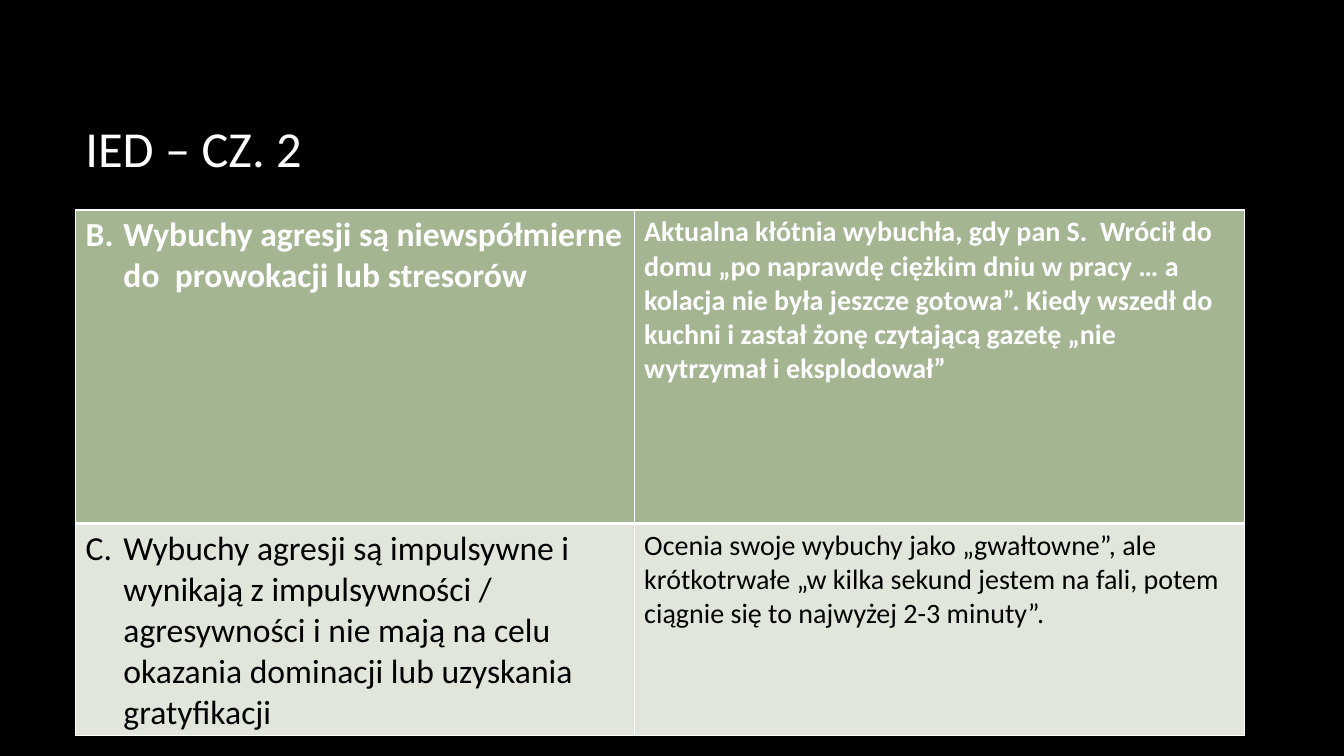
"""Build the slide "IED – CZ. 2" with its two-row criteria table."""
from lxml import etree
from pptx import Presentation
from pptx.dml.color import RGBColor
from pptx.enum import text
from pptx.oxml import ns
from pptx.util import Pt

BLACK = RGBColor(0x00, 0x00, 0x00)
WHITE = RGBColor(0xFF, 0xFF, 0xFF)
SAGE = RGBColor(0xA5, 0xB5, 0x92)
PALE_SAGE = RGBColor(0xE1, 0xE5, 0xDC)
FONT = "Calibri"

TITLE = "IED – CZ. 2"
CRITERIA = [
    ("Wybuchy agresji są niewspółmierne do  prowokacji lub stresorów",
     "Aktualna kłótnia wybuchła, gdy pan S.  Wrócił do domu „po naprawdę ciężkim dniu w pracy … "
     "a kolacja nie była jeszcze gotowa”. Kiedy wszedł do kuchni i zastał żonę czytającą gazetę "
     "„nie wytrzymał i eksplodował”"),
    ("Wybuchy agresji są impulsywne i wynikają z impulsywności / agresywności i nie mają na celu "
     "okazania dominacji lub uzyskania gratyfikacji",
     "Ocenia swoje wybuchy jako „gwałtowne”, ale krótkotrwałe „w kilka sekund jestem na fali, "
     "potem ciągnie się to najwyżej 2-3 minuty”."),
]
FIRST_LETTER = 2
COLUMN_WIDTHS = (399, 436)
ROW_HEIGHTS = (224, 140)
TEXT_SIZES = (24, 20)
ROW_STYLES = [
    {"fill": SAGE, "color": WHITE, "bold": True, "top": 1, "bottom": 3},
    {"fill": PALE_SAGE, "color": BLACK, "bold": False, "top": 3, "bottom": 1},
]


def set_font(para, size, color, bold=False):
    para.font.name = FONT
    para.font.size = Pt(size)
    para.font.bold = bold
    para.font.color.rgb = color


def add_letter(para, start):
    props = para._p.get_or_add_pPr()
    props.set("marL", str(Pt(27)))
    props.set("indent", str(-Pt(27)))
    etree.SubElement(props, ns.qn("a:buFont"), typeface="+mj-lt")
    etree.SubElement(props, ns.qn("a:buAutoNum"), type="alphaUcPeriod", startAt=str(start))


def set_borders(cell, top, bottom):
    props = cell._tc.get_or_add_tcPr()
    widths = {"lnL": 1, "lnR": 1, "lnT": top, "lnB": bottom}
    for position, (side, width) in enumerate(widths.items()):
        line = etree.Element(ns.qn("a:" + side), w=str(Pt(width)))
        fill = etree.SubElement(line, ns.qn("a:solidFill"))
        etree.SubElement(fill, ns.qn("a:srgbClr"), val=str(WHITE))
        props.insert(position, line)


def add_title(slide):
    box = slide.shapes.add_textbox(Pt(54), Pt(48), Pt(798), Pt(114.5))
    frame = box.text_frame
    frame.word_wrap = True
    frame.vertical_anchor = text.MSO_ANCHOR.MIDDLE
    frame.text = TITLE
    set_font(frame.paragraphs[0], 36, WHITE)


def add_criteria(slide):
    table = slide.shapes.add_table(
        len(CRITERIA), len(COLUMN_WIDTHS), Pt(54), Pt(150),
        Pt(sum(COLUMN_WIDTHS)), Pt(sum(ROW_HEIGHTS))).table
    table.horz_banding = False
    for column, width in zip(table.columns, COLUMN_WIDTHS):
        column.width = Pt(width)
    for index, (row, height, style) in enumerate(zip(table.rows, ROW_HEIGHTS, ROW_STYLES)):
        row.height = Pt(height)
        for cell, words, size in zip(row.cells, CRITERIA[index], TEXT_SIZES):
            cell.text = words
            cell.fill.solid()
            cell.fill.fore_color.rgb = style["fill"]
            set_borders(cell, style["top"], style["bottom"])
        add_letter(row.cells[0].text_frame.paragraphs[0], FIRST_LETTER + index)
        for cell, size in zip(row.cells, TEXT_SIZES):
            set_font(cell.text_frame.paragraphs[0], size, style["color"], style["bold"])


def main():
    deck = Presentation()
    deck.slide_width, deck.slide_height = Pt(960), Pt(540)
    slide = deck.slides.add_slide(deck.slide_layouts[6])
    slide.background.fill.solid()
    slide.background.fill.fore_color.rgb = BLACK
    add_title(slide)
    add_criteria(slide)
    deck.save("out.pptx")


if __name__ == "__main__":
    main()
